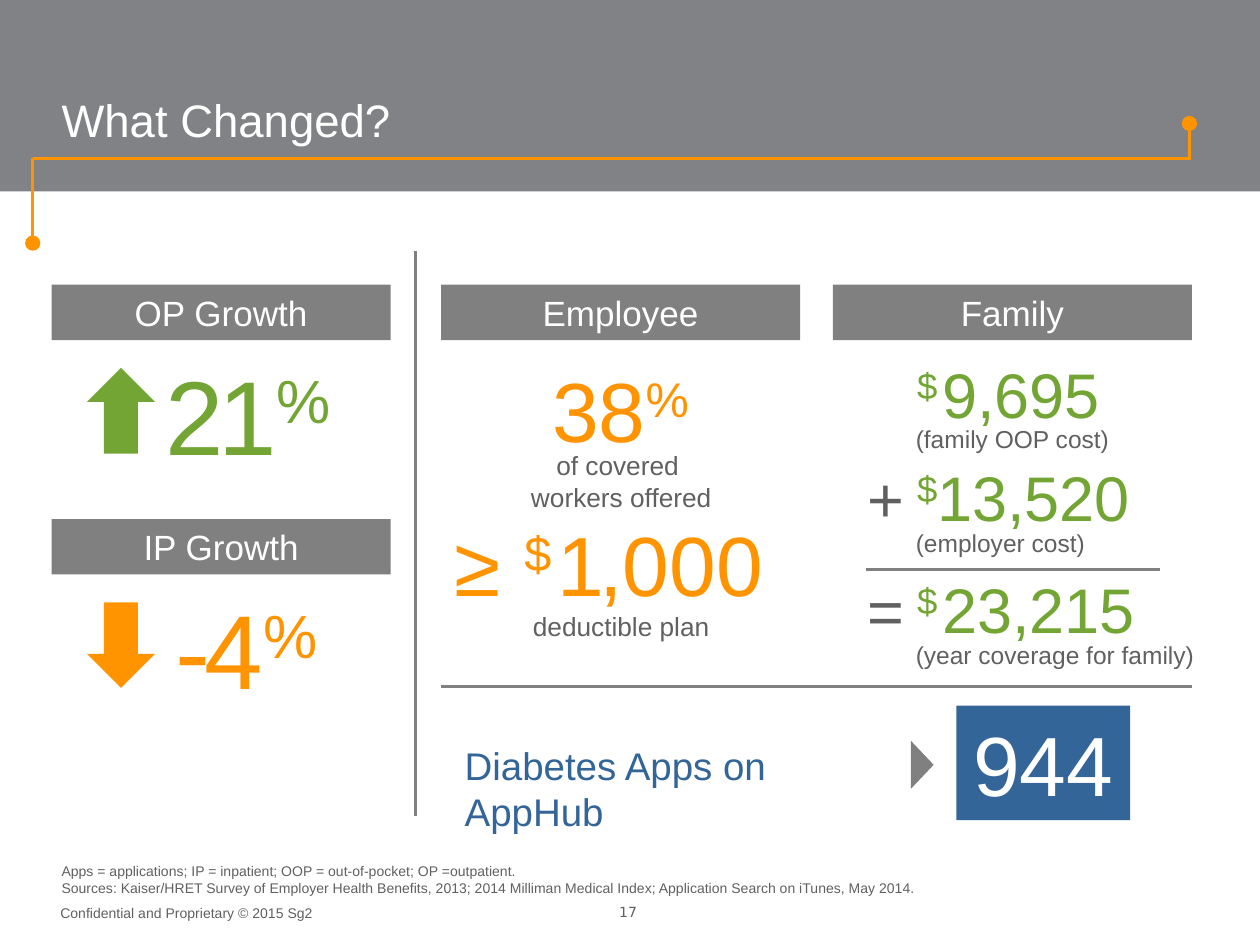
from lxml import etree
from pptx import Presentation
from pptx.dml.color import RGBColor
from pptx.enum.shapes import MSO_CONNECTOR, MSO_SHAPE
from pptx.enum.text import MSO_ANCHOR, PP_ALIGN
from pptx.oxml.ns import qn
from pptx.util import Inches, Pt

RECT = MSO_SHAPE.RECTANGLE
OVAL = MSO_SHAPE.OVAL
UP = MSO_SHAPE.UP_ARROW
DOWN = MSO_SHAPE.DOWN_ARROW
WEDGE = MSO_SHAPE.ISOSCELES_TRIANGLE
STRAIGHT = MSO_CONNECTOR.STRAIGHT
LEFT, CENTER = PP_ALIGN.LEFT, PP_ALIGN.CENTER
TOP, MIDDLE, BOTTOM = MSO_ANCHOR.TOP, MSO_ANCHOR.MIDDLE, MSO_ANCHOR.BOTTOM

SLATE = RGBColor(0x81, 0x82, 0x85)
GRAY = RGBColor(0x80, 0x80, 0x80)
INK = RGBColor(0x60, 0x60, 0x60)
ORANGE = RGBColor(0xFF, 0x94, 0x00)
GREEN = RGBColor(0x73, 0xA5, 0x34)
BLUE = RGBColor(0x33, 0x65, 0x99)
WHITE = RGBColor(0xFF, 0xFF, 0xFF)


def add_run(para, text, size, color, font="Arial", base=0, gap=0):
    run = para.add_run()
    run.text = text
    run.font.size = Pt(size)
    run.font.name = font
    run.font.color.rgb = color
    props = run._r.get_or_add_rPr()
    if base:
        props.set("baseline", str(base * 1000))
    if gap:
        props.set("spc", str(gap * 100))


def fill_text(frame, runs, size, color, align, anchor, font="Arial"):
    frame.word_wrap = True
    frame.vertical_anchor = anchor
    para = frame.paragraphs[0]
    para.alignment = align
    for text, base, gap in runs:
        for i, line in enumerate(text.split("\n")):
            if i:
                para.add_line_break()
            add_run(para, line, size, color, font, base, gap)


def add_text(slide, box, runs, size, color, align=LEFT, anchor=TOP, font="Arial"):
    if isinstance(runs, str):
        runs = [(runs, 0, 0)]
    shape = slide.shapes.add_textbox(*map(Inches, box))
    fill_text(shape.text_frame, runs, size, color, align, anchor, font)
    return shape


def add_block(slide, kind, box, color, turn=0):
    shape = slide.shapes.add_shape(kind, *map(Inches, box))
    shape.shadow.inherit = False
    shape.fill.solid()
    shape.fill.fore_color.rgb = color
    shape.line.fill.background()
    shape.rotation = turn
    return shape


def add_label(slide, box, text, size, color):
    shape = add_block(slide, RECT, box, color)
    fill_text(shape.text_frame, [(text, 0, 0)], size, WHITE, CENTER, MIDDLE)


def add_line(slide, start, end, color):
    line = slide.shapes.add_connector(STRAIGHT, *map(Inches, start + end))
    line.line.color.rgb = color
    line.line.width = Pt(1.5)
    etree.SubElement(line._element.spPr, qn("a:effectLst"))


def add_dot(slide, x, y):
    dot = add_block(slide, OVAL, (x, y, 0.1, 0.1), ORANGE)
    dot.line.color.rgb = ORANGE
    dot.line.width = Pt(1.5)


def add_frame(slide):
    add_block(slide, RECT, (0, 0, 10, 1.52), SLATE)
    add_dot(slide, 9.39, 0.93)
    add_dot(slide, 0.21, 1.88)
    add_line(slide, (9.44, 1.27), (9.44, 0.96), ORANGE)
    add_line(slide, (0.26, 1.26), (9.45, 1.26), ORANGE)
    add_line(slide, (0.26, 1.25), (0.26, 1.96), ORANGE)
    add_text(slide, (0.39, 0.16, 9.1, 1.05), "What Changed?", 26, WHITE, anchor=BOTTOM)
    add_text(slide, (0.39, 6.8, 7.84, 0.37),
             "Apps = applications; IP = inpatient; OOP = out-of-pocket; OP =outpatient.\n"
             "Sources: Kaiser/HRET Survey of Employer Health Benefits, 2013; "
             "2014 Milliman Medical Index; Application Search on iTunes, May 2014.",
             8, INK)
    foot = add_text(slide, (0.38, 7.07, 4.22, 0.34),
                    "Confidential and Proprietary © 2015 Sg2", 8, INK, anchor=BOTTOM)
    foot.text_frame.margin_bottom = Inches(0.1)
    add_text(slide, (4.79, 7.12, 0.39, 0.24), "17", 8, INK, CENTER, font="DejaVu Sans")


def add_growth(slide):
    rows = [
        (2.26, "OP Growth", UP, GREEN, "21", -3, (1.03, 1.88)),
        (4.12, "IP Growth", DOWN, ORANGE, "-4", -3, (1.07, 1.77)),
    ]
    for y, name, arrow, color, value, gap, (x, width) in rows:
        add_label(slide, (0.41, y, 2.69, 0.44), name, 20, GRAY)
        add_block(slide, arrow, (0.69, y + 0.66, 0.54, 0.68), color)
        add_text(slide, (x, y + 0.47, width, 1.11),
                 [(value, 0, gap), ("%", 30, gap)], 60, color, CENTER)


def add_worker(slide):
    add_label(slide, (3.5, 2.26, 2.85, 0.44), "Employee", 20, GRAY)
    add_text(slide, (3.74, 2.8, 2.37, 0.69),
             [("38", 0, 0), ("%", 30, 0)], 48, ORANGE, CENTER)
    add_text(slide, (3.97, 3.52, 1.92, 0.59),
             "of covered \nworkers offered", 15, INK, CENTER)
    add_text(slide, (3.5, 4.02, 2.85, 0.63),
             [("≥ ", 0, 0), ("$ ", 30, -4), ("1,", 0, -3), ("000 ", 0, 0)],
             48, ORANGE, CENTER)
    add_text(slide, (3.95, 4.79, 1.96, 0.35), "deductible plan", 15, INK, CENTER)


def add_family(slide):
    add_label(slide, (6.61, 2.26, 2.85, 0.44), "Family", 20, GRAY)
    rows = [
        (2.77, "", "$ ", "9,695", "(family OOP cost)"),
        (3.59, "+", "$", "13,520", "(employer cost)"),
        (4.48, "=", "$ ", "23,215", "(year coverage for family)"),
    ]
    for y, sign, unit, value, note in rows:
        add_text(slide, (7.18, y, 2.03, 0.71),
                 [(unit, 30, -3), (value, 0, 0)], 36, GREEN)
        add_text(slide, (7.17, y + 0.55, 2.46, 0.34), note, 14, INK)
        if sign:
            add_text(slide, (6.79, y + 0.01, 0.44, 0.71), sign, 36, INK)
    add_line(slide, (9.21, 4.52), (6.87, 4.52), GRAY)


def add_apps(slide):
    add_line(slide, (3.5, 5.45), (9.46, 5.45), GRAY)
    add_text(slide, (3.59, 5.84, 3.64, 0.47), "Diabetes Apps on AppHub", 22, BLUE)
    add_block(slide, WEDGE, (7.13, 5.98, 0.38, 0.18), GRAY, 90)
    add_label(slide, (7.59, 5.6, 1.38, 0.91), "944", 48, BLUE)


def main():
    deck = Presentation()
    deck.slide_width, deck.slide_height = Inches(10), Inches(7.5)
    slide = deck.slides.add_slide(deck.slide_layouts[6])
    add_frame(slide)
    add_line(slide, (3.3, 1.99), (3.3, 6.48), GRAY)
    add_growth(slide)
    add_worker(slide)
    add_family(slide)
    add_apps(slide)
    deck.save("out.pptx")


if __name__ == "__main__":
    main()
